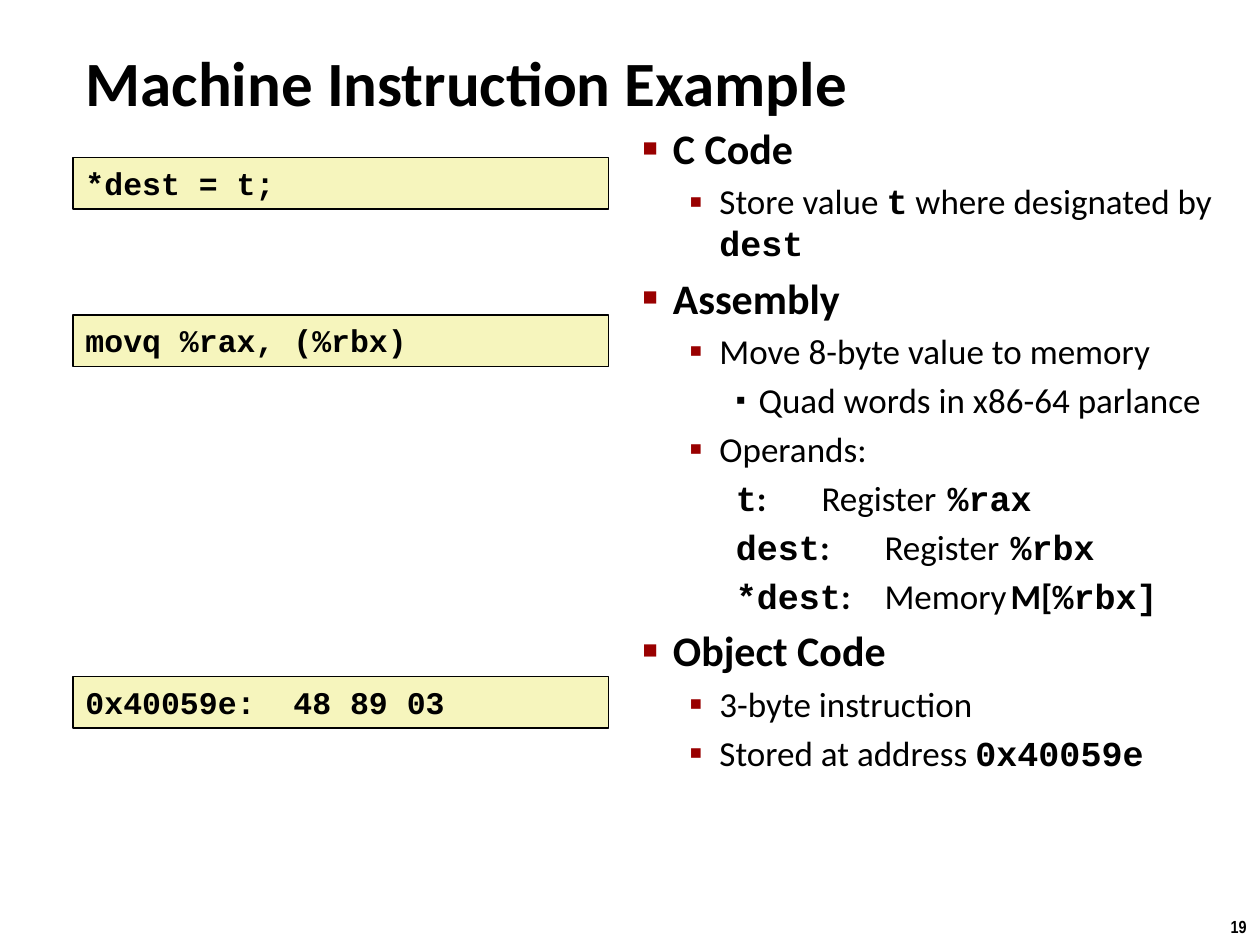
from lxml import etree
from pptx import Presentation
from pptx.dml.color import RGBColor
from pptx.enum import shapes, text
from pptx.oxml.ns import qn
from pptx.util import Inches, Pt

# Content
TITLE = "Machine Instruction Example"
NUMBER = "19"
CODES = [  # top, code
    (1.25, "*dest = t;"),
    (2.5, "movq %rax, (%rbx)"),
    (5.37, "0x40059e:  48 89 03"),
]
SANS, MONO = "Calibri", "Courier New"
N, B, M = (SANS, False), (SANS, True), (MONO, True)  # plain, bold, code
NOTES = [  # kind, runs
    ("head", [(B, "C Code")]),
    ("item", [(N, "Store value "), (M, "t"),
              (N, " where designated by "), (M, "dest")]),
    ("head", [(B, "Assembly")]),
    ("item", [(N, "Move 8-byte value to memory")]),
    ("sub", [(N, "Quad words in x86-64 parlance")]),
    ("item", [(N, "Operands:")]),
    ("row", [(M, "t"), (B, ":\t"), (N, "Register\t"), (M, "%rax")]),
    ("row", [(M, "dest"), (B, ":"), (N, "\tRegister\t"), (M, "%rbx")]),
    ("row", [(M, "*dest"), (B, ":"), (N, " \tMemory\t"), (B, "M["),
             (M, "%rbx]")]),
    ("head", [(B, "Object Code")]),
    ("item", [(N, "3-byte instruction")]),
    ("item", [(N, "Stored at address "), (M, "0x40059e")]),
]
KINDS = {  # level, size, margin, hang, bullet (mark, percent, colour)
    "head": (0, 24, 0.24, 0.24, ("■", 60, "990000")),
    "item": (1, 20, 0.61, 0.24, ("▪", 110, "990000")),
    "sub": (2, 20, 0.92, 0.18, ("▪", 80, "000000")),
    "row": (2, 20, 0.92, 0.18, None),
}
TABS = (1.75, 2.75)


def color(code):
    return RGBColor.from_string(code)


def style(font, size, name=SANS, bold=True):
    font.size, font.name, font.bold = Pt(size), name, bold
    font.color.rgb = color("000000")


def place(shape, *box):
    shape.left, shape.top, shape.width, shape.height = map(Inches, box)


def add(parent, tag, **attrs):
    node = etree.SubElement(parent, qn(tag))
    for key, val in attrs.items():
        node.set(key, str(val))
    return node


def indent(para, margin, hang):
    props = para._p.get_or_add_pPr()
    props.set("marL", str(Inches(margin)))
    props.set("indent", str(-Inches(hang)))
    return props


def layout(para, margin, hang, bullet):
    props = indent(para, margin, hang)
    if bullet:
        mark, size, tint = bullet
        add(add(props, "a:buClr"), "a:srgbClr", val=tint)
        add(props, "a:buSzPct", val=size * 1000)
        add(props, "a:buChar", char=mark)
    else:
        add(props, "a:buNone")
    stops = add(props, "a:tabLst")
    for pos in TABS:
        add(stops, "a:tab", pos=Inches(pos), algn="l")


deck = Presentation()
deck.slide_width, deck.slide_height = Inches(10), Inches(7.5)
slide = deck.slides.add_slide(deck.slide_layouts[1])

# Title
title = slide.shapes.title
place(title, 0.58, 0.33, 7.94, 0.63)
frame = title.text_frame
frame.text = TITLE
frame.auto_size = text.MSO_AUTO_SIZE.NONE
frame.vertical_anchor = text.MSO_ANCHOR.MIDDLE
para = frame.paragraphs[0]
para.alignment = text.PP_ALIGN.LEFT
indent(para, 0.13, 0.13)
style(para.font, 36)

# Notes on the right
body = slide.placeholders[1]
place(body, 5, 0.92, 5, 6.33)
frame = body.text_frame
frame.auto_size = text.MSO_AUTO_SIZE.NONE
for i, (kind, runs) in enumerate(NOTES):
    level, size, margin, hang, bullet = KINDS[kind]
    para = frame.add_paragraph() if i else frame.paragraphs[0]
    para.level = level
    layout(para, margin, hang, bullet)
    for (name, bold), words in runs:
        run = para.add_run()
        run.text = words
        style(run.font, size, name, bold)

# Code boxes on the left
for top, code in CODES:
    box = slide.shapes.add_shape(
        shapes.MSO_SHAPE.RECTANGLE, *map(Inches, (0.58, top, 4.25, 0.41)))
    box.shadow.inherit = False
    box.fill.solid()
    box.fill.fore_color.rgb = color("F6F5BD")
    box.line.color.rgb = color("000000")
    box.line.width = Pt(1)
    frame = box.text_frame
    frame.text = code
    frame.vertical_anchor = text.MSO_ANCHOR.TOP
    para = frame.paragraphs[0]
    para.alignment = text.PP_ALIGN.LEFT
    style(para.font, 18, MONO)

# Slide number
box = slide.shapes.add_textbox(*map(Inches, (9.66, 7.22, 0.34, 0.27)))
box.text_frame.text = NUMBER
para = box.text_frame.paragraphs[0]
para.alignment = text.PP_ALIGN.CENTER
style(para.font, 10, "Arial Narrow")

deck.save("out.pptx")
